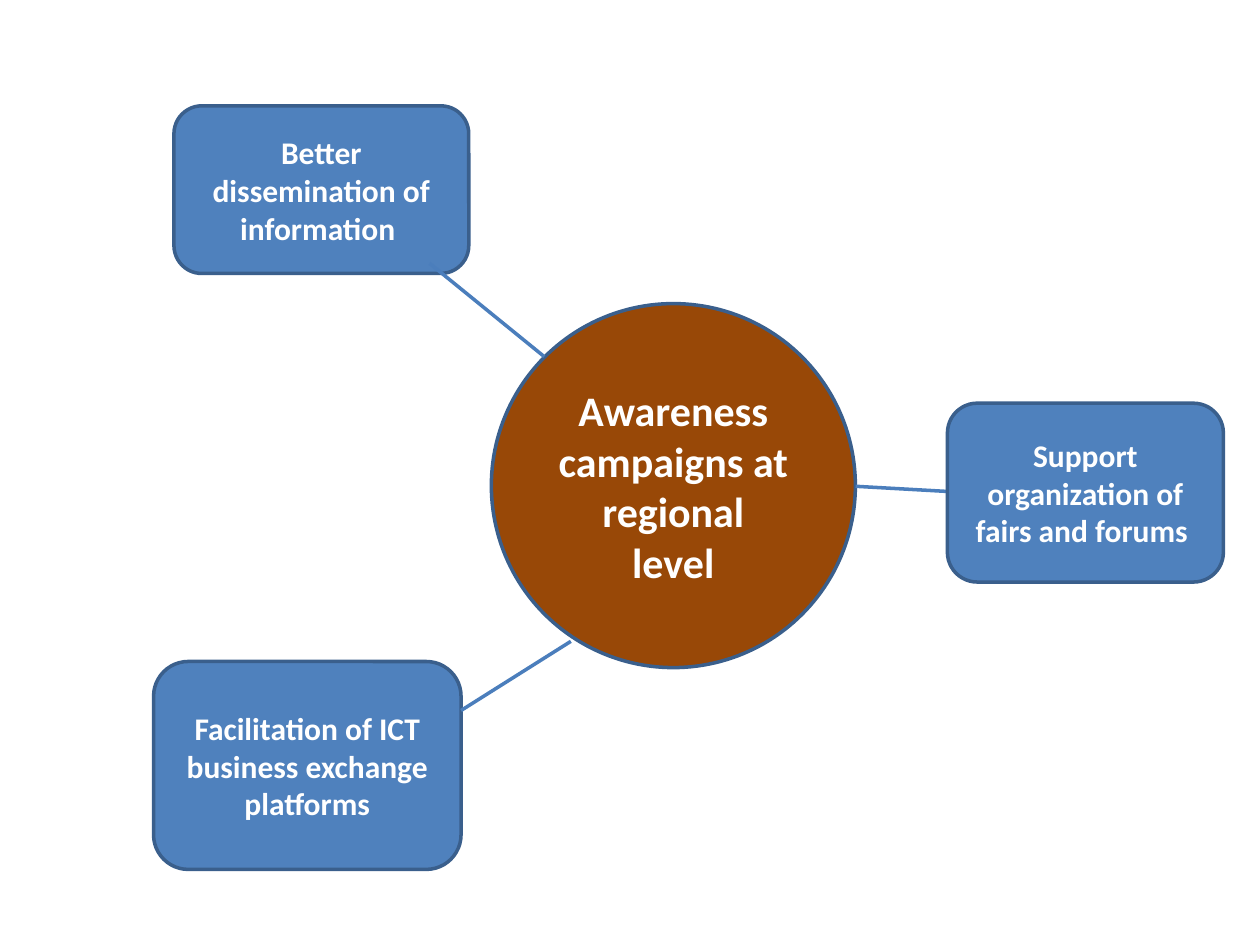
from lxml import etree
from pptx import Presentation
from pptx.dml.color import RGBColor
from pptx.enum import shapes, text
from pptx.oxml import ns
from pptx.util import Pt

WHITE, BLUE, BROWN = "FFFFFF", "4F81BD", "984807"
OUTLINE, LINK = "3A5F8C", "4B7EBC"
OVAL = shapes.MSO_SHAPE.OVAL
ROUNDED = shapes.MSO_SHAPE.ROUNDED_RECTANGLE
rgb = RGBColor.from_string

prs = Presentation()
prs.slide_width, prs.slide_height = Pt(720), Pt(540)
s = prs.slides.add_slide(prs.slide_layouts[6])


def add_node(label, box, kind=ROUNDED, fill=BLUE, size=18):
    sp = s.shapes.add_shape(kind, *[Pt(v) for v in box])
    sp.shadow.inherit = False
    sp.fill.solid()
    sp.fill.fore_color.rgb = rgb(fill)
    sp.line.color.rgb = rgb(OUTLINE)
    sp.line.width = Pt(2)
    tf = sp.text_frame
    tf.word_wrap = True
    tf.vertical_anchor = text.MSO_ANCHOR.MIDDLE
    p = tf.paragraphs[0]
    p.text = label
    p.alignment = text.PP_ALIGN.CENTER
    font = p.runs[0].font
    font.name, font.size, font.bold = "Calibri", Pt(size), True
    font.color.rgb = rgb(WHITE)


def add_link(*ends, arrow=False):
    c = s.shapes.add_connector(shapes.MSO_CONNECTOR.STRAIGHT, *[Pt(v) for v in ends])
    c.line.color.rgb = rgb(LINK)
    c.line.width = Pt(2)
    if arrow:
        etree.SubElement(c.line._get_or_add_ln(), ns.qn("a:tailEnd"), type="arrow")
    etree.SubElement(c._element.spPr, ns.qn("a:effectLst"))


# Central theme
add_node("Awareness campaigns at regional level", (280.8, 173.5, 208, 208),
         OVAL, BROWN, 24)

# Information: the link lies over its box
add_node("Better dissemination of information ", (99.4, 60.5, 168.5, 95.8))
add_link(245.5, 150.5, 311, 203.8)

# Business exchange
add_node("Facilitation of ICT business exchange platforms", (87.8, 378, 175.7, 118.8))
add_link(263.5, 406, 326.2, 366.5)

# Fairs and forums: the box covers the arrowhead
add_link(488.9, 277.9, 553, 281.5, arrow=True)
add_node("Support organization of fairs and forums ", (541.4, 230.4, 157.7, 102.2))

prs.save("out.pptx")
